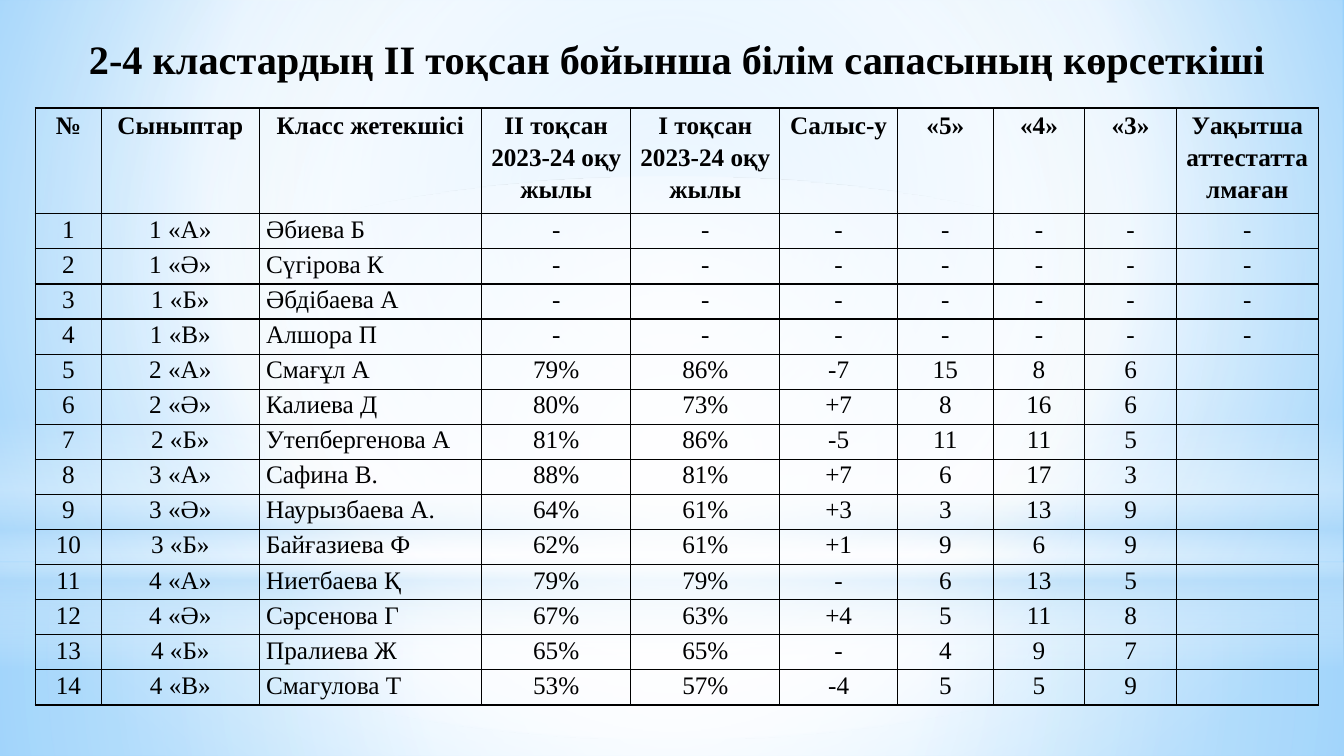
from dataclasses import dataclass
from typing import Optional

from lxml.etree import SubElement
from pptx import Presentation
from pptx.dml.color import RGBColor
from pptx.enum.shapes import MSO_SHAPE as Shape
from pptx.enum.text import MSO_ANCHOR as Anchor, MSO_AUTO_SIZE as AutoSize, PP_ALIGN as Align
from pptx.oxml.ns import qn
from pptx.util import Emu, Inches, Pt

# Grid: 160 columns by 90 rows, each a twelfth of an inch
UNIT = Inches(1) / 12
COLS, ROWS = 160, 90
FONT = "Times New Roman"
COLORS = {"text": "000000", "white": "FFFFFF", "pale": "B4DCFA",
          "sky": "9ED5FF", "blue": "5BB9FF"}


@dataclass
class Gradient:
    stops: list[tuple[int, str, int]]  # position %, colour, opacity %
    focus: tuple[int, int, int, int] = (50, 50, 50, 50)
    angle: Optional[int] = None


@dataclass
class Glow:
    kind: Shape
    top: float
    height: float
    gradient: Gradient


BACKDROP = Gradient([(0, "sky", 100), (60, "white", 100), (100, "blue", 100)], (20, 10, 20, 60))
GLOWS = [
    Glow(Shape.RECTANGLE, 67, 23, Gradient([(0, "white", 91), (37, "white", 76), (100, "pale", 79)])),
    Glow(Shape.RECTANGLE, 0, 67, Gradient([(0, "white", 89), (48, "white", 62), (100, "pale", 79)])),
    Glow(Shape.RECTANGLE, 49.5, 30, Gradient(
        [(0, "white", 0), (29, "white", 30), (45, "pale", 40),
         (55, "white", 26), (65, "pale", 60), (100, "white", 0)], angle=90)),
    Glow(Shape.OVAL, 21, 67, Gradient([(0, "white", 100), (56, "white", 0)])),
]

# Table content
TITLE = "2-4 кластардың ІІ тоқсан бойынша білім сапасының көрсеткіші"
LEFT, WIDTH, TABLE_TOP = 4.2, 152.8, 12.85
COL_WIDTHS = [7.9, 18.75, 26.5, 17.75, 17.75, 14, 11.4, 10.9, 10.9, 16.9]
HEAD_HEIGHT, ROW_HEIGHT = 12.6, 4.18
NAME_COL = 2
HEAD = ["№", "Сыныптар", "Класс жетекшісі", "ІІ тоқсан\n2023-24 оқу жылы",
        "І тоқсан\n2023-24 оқу жылы", "Салыс-у", "«5»", "«4»", "«3»",
        "Уақытша\nаттестатталмаған"]
NO_MARKS = ["-"] * 7
CLASSES = [
    ["1 «А»", "Әбиева Б", *NO_MARKS],
    ["1 «Ә»", "Сүгірова К", *NO_MARKS],
    ["1 «Б»", "Әбдібаева А", *NO_MARKS],
    ["1 «В»", "Алшора П", *NO_MARKS],
    ["2 «А»", "Смағұл А", "79%", "86%", "-7", "15", "8", "6", ""],
    ["2 «Ә»", "Калиева Д", "80%", "73%", "+7", "8", "16", "6", ""],
    ["2 «Б»", "Утепбергенова А", "81%", "86%", "-5", "11", "11", "5", ""],
    ["3 «А»", "Сафина В.", "88%", "81%", "+7", "6", "17", "3", ""],
    ["3 «Ә»", "Наурызбаева А.", "64%", "61%", "+3", "3", "13", "9", ""],
    ["3 «Б»", "Байғазиева Ф", "62%", "61%", "+1", "9", "6", "9", ""],
    ["4 «А»", "Ниетбаева Қ", "79%", "79%", "-", "6", "13", "5", ""],
    ["4 «Ә»", "Сәрсенова Г", "67%", "63%", "+4", "5", "11", "8", ""],
    ["4 «Б»", "Пралиева Ж", "65%", "65%", "-", "4", "9", "7", ""],
    ["4 «В»", "Смагулова Т", "53%", "57%", "-4", "5", "5", "9", ""],
]


def grid(n: float) -> Emu:
    return Emu(round(n * UNIT))


def paint(fill, element, gradient: Gradient) -> None:
    """Fill the element with a gradient of translucent stops."""
    fill.gradient()
    grad = element.find(".//" + qn("a:gradFill"))
    grad.clear()
    grad.set("rotWithShape", "1")
    stops = SubElement(grad, qn("a:gsLst"))
    for pos, color, opacity in gradient.stops:
        stop = SubElement(stops, qn("a:gs"), pos=str(pos * 1000))
        rgb = SubElement(stop, qn("a:srgbClr"), val=COLORS[color])
        if opacity < 100:
            SubElement(rgb, qn("a:alpha"), val=str(opacity * 1000))
    if gradient.angle is not None:
        SubElement(grad, qn("a:lin"), ang=str(gradient.angle * 60000), scaled="0")
    else:
        circle = SubElement(grad, qn("a:path"), {"path": "circle"})
        sides = {side: str(share * 1000) for side, share in zip("ltrb", gradient.focus)}
        SubElement(circle, qn("a:fillToRect"), sides)


def format_paragraph(p, size: float, bold: bool, align: Align, spacing: float) -> None:
    p.alignment, p.line_spacing = align, spacing
    for font in [p.font, *(r.font for r in p.runs)]:
        font.name, font.size, font.bold = FONT, Pt(size), bold
        font.color.rgb = RGBColor.from_string(COLORS["text"])


def draw_glow(slide, glow: Glow) -> None:
    sp = slide.shapes.add_shape(glow.kind, 0, grid(glow.top), grid(COLS), grid(glow.height))
    sp.shadow.inherit = False
    sp.line.fill.background()
    paint(sp.fill, sp.element, glow.gradient)


def draw_title(slide) -> None:
    sp = slide.shapes.title
    sp.element.getparent().append(sp.element)  # bring in front of the glows
    sp.left, sp.top, sp.width, sp.height = map(grid, (LEFT, 3.7, WIDTH, 6.6))
    tf = sp.text_frame
    tf.text = TITLE
    tf.word_wrap, tf.auto_size = True, AutoSize.NONE
    tf.vertical_anchor = Anchor.MIDDLE
    format_paragraph(tf.paragraphs[0], 28.8, True, Align.CENTER, 1.0)


def fill_cell(cell, text: str, is_head: bool, align: Align) -> None:
    cell.margin_left = cell.margin_right = Inches(0.07)
    cell.margin_top = cell.margin_bottom = 0
    cell.text_frame.text = text
    for p in cell.text_frame.paragraphs:
        format_paragraph(p, 18, is_head, align, 1.15 if is_head else 1.07)
    # Borders come before the fill
    props = cell._tc.get_or_add_tcPr()
    for side in ("a:lnL", "a:lnR", "a:lnT", "a:lnB"):
        line = SubElement(props, qn(side), w=str(Pt(1)))
        solid = SubElement(line, qn("a:solidFill"))
        SubElement(solid, qn("a:srgbClr"), val=COLORS["text"])
    cell.fill.background()


def draw_table(slide) -> None:
    rows = [HEAD] + [[str(n), *row] for n, row in enumerate(CLASSES, 1)]
    heights = [HEAD_HEIGHT] + [ROW_HEIGHT] * len(CLASSES)
    table = slide.shapes.add_table(len(rows), len(HEAD), grid(LEFT), grid(TABLE_TOP),
                                   grid(sum(COL_WIDTHS)), grid(sum(heights))).table
    table.first_row = table.horz_banding = False
    for column, width in zip(table.columns, COL_WIDTHS):
        column.width = grid(width)
    for i, (row, height) in enumerate(zip(rows, heights)):
        table.rows[i].height = grid(height)
        for j, text in enumerate(row):
            align = Align.LEFT if i and j == NAME_COL else Align.CENTER
            fill_cell(table.cell(i, j), text, i == 0, align)


def main() -> None:
    prs = Presentation()
    prs.slide_width, prs.slide_height = grid(COLS), grid(ROWS)
    slide = prs.slides.add_slide(prs.slide_layouts[5])
    paint(slide.background.fill, slide.element, BACKDROP)
    for glow in GLOWS:
        draw_glow(slide, glow)
    draw_title(slide)
    draw_table(slide)
    prs.save("out.pptx")


if __name__ == "__main__":
    main()
